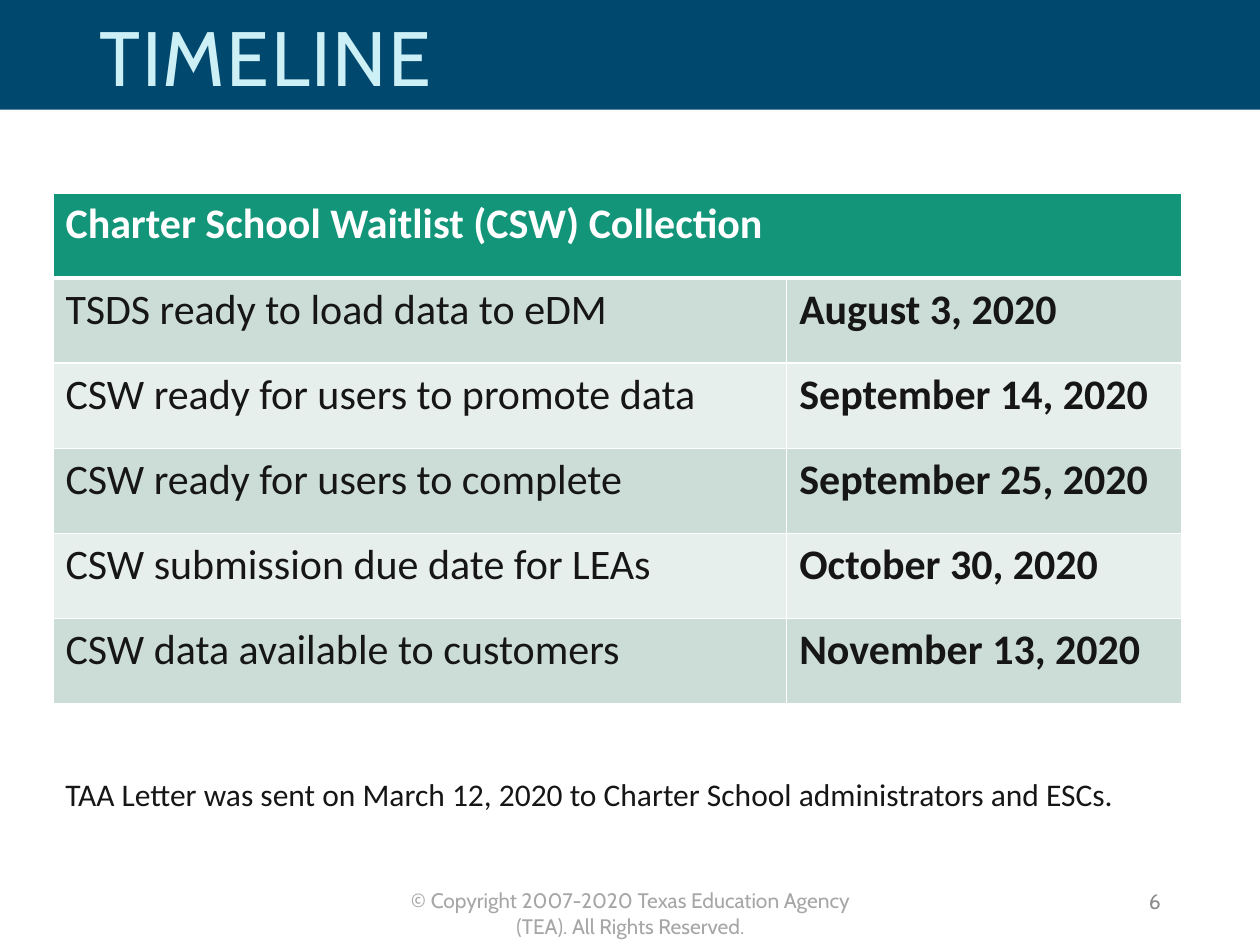
from lxml import etree
from pptx import Presentation
from pptx import util as u
from pptx.dml.color import RGBColor
from pptx.enum import shapes, text
from pptx.oxml.ns import qn

WIDTH, HEIGHT = 10, 7.5
NAVY, ICE, GREEN, INK, WHITE = "00486E", "CCF0F5", "129579", "171616", "FFFFFF"
BANDS = ("CCDDD7", "E7EFEC")
LEFT, CONTENT_WIDTH = 0.042, 0.896


def color(value):
    return RGBColor.from_string(value)


class SlideBuilder:
    """Holds the style and the current slide; lengths are shares of its size."""

    heading_font, body_font = "Cabin", "Calibri"

    def __init__(self, presentation):
        self.slide = presentation.slides.add_slide(presentation.slide_layouts[6])

    def box(self, left, top, width, height):
        return (u.Inches(left * WIDTH), u.Inches(top * HEIGHT),
                u.Inches(width * WIDTH), u.Inches(height * HEIGHT))

    def run(self, paragraph, words, size, ink, font, bold=False):
        run = paragraph.add_run()
        run.text = words
        run.font.size, run.font.name, run.font.bold = u.Pt(size), font, bold
        run.font.color.rgb = color(ink)
        return run

    def band(self, place, fill):
        shape = self.slide.shapes.add_shape(
            shapes.MSO_SHAPE.RECTANGLE, *self.box(*place))
        shape.shadow.inherit = False
        shape.fill.solid()
        shape.fill.fore_color.rgb = color(fill)
        shape.line.fill.background()

    def label(self, place, words, size, ink, font, align=text.PP_ALIGN.LEFT,
              anchor=text.MSO_ANCHOR.MIDDLE, line_spacing=1.0):
        frame = self.slide.shapes.add_textbox(*self.box(*place)).text_frame
        frame.word_wrap = True
        frame.vertical_anchor = anchor
        paragraph = frame.paragraphs[0]
        paragraph.alignment = align
        paragraph.line_spacing = line_spacing
        return self.run(paragraph, words, size, ink, font)

    def cell(self, cell, words, fill, ink, bold, bottom=1):
        self.run(cell.text_frame.paragraphs[0], words, 24, ink, self.body_font, bold)
        self.cell_style(cell, fill, bottom)

    def cell_style(self, cell, fill, bottom=1):
        cell.fill.solid()
        cell.fill.fore_color.rgb = color(fill)
        # Borders come before the fill in the cell properties
        properties = cell._tc.get_or_add_tcPr()
        for index, (side, points) in enumerate(
                (("lnL", 1), ("lnR", 1), ("lnT", 1), ("lnB", bottom))):
            line = etree.Element(qn(f"a:{side}"), w=str(u.Pt(points)))
            solid = etree.SubElement(line, qn("a:solidFill"))
            etree.SubElement(solid, qn("a:srgbClr"), val=WHITE)
            properties.insert(index, line)

    def table(self, place, heading, rows, column_shares):
        left, top, width, height = self.box(*place)
        table = self.slide.shapes.add_table(
            len(rows) + 1, len(column_shares), left, top, width, height).table
        for column, share in zip(table.columns, column_shares):
            column.width = int(width * share)
        # Heading across all columns
        table.cell(0, 0).merge(table.cell(0, len(column_shares) - 1))
        self.cell(table.cell(0, 0), heading, GREEN, WHITE, True, bottom=3)
        self.cell_style(table.cell(0, 1), GREEN, bottom=3)
        # Banded rows with bold dates
        for number, row in enumerate(rows):
            for column, words in enumerate(row):
                self.cell(table.cell(number + 1, column), words,
                          BANDS[number % 2], INK, column == 1)


def main():
    presentation = Presentation()
    presentation.slide_width, presentation.slide_height = u.Inches(WIDTH), u.Inches(HEIGHT)
    builder = SlideBuilder(presentation)

    # Title band
    builder.band((0, 0, 1, 0.116), NAVY)
    title = builder.label((0.069, 0.007, 0.8, 0.116), "TIMELINE", 44, ICE,
                          builder.heading_font, line_spacing=0.9)
    title.font._element.set("spc", "100")

    # Schedule
    builder.table((LEFT, 0.204, CONTENT_WIDTH, 0.541),
                  "Charter School Waitlist (CSW) Collection", [
        ("TSDS ready to load data to eDM", "August 3, 2020"),
        ("CSW ready for users to promote data", "September 14, 2020"),
        ("CSW ready for users to complete", "September 25, 2020"),
        ("CSW submission due date for LEAs", "October 30, 2020"),
        ("CSW data available to customers", "November 13, 2020"),
    ], (0.65, 0.35))

    # Note below the table
    builder.label((LEFT, 0.813, CONTENT_WIDTH, 0.06),
                  "TAA Letter was sent on March 12, 2020 to Charter School "
                  "administrators and ESCs.", 18, INK, builder.body_font,
                  line_spacing=0.9)

    # Footer
    builder.label((0.304, 0.933, 0.393, 0.04),
                  "© Copyright 2007-2020 Texas Education Agency (TEA). "
                  "All Rights Reserved.", 12, "A6A6A6", builder.heading_font,
                  text.PP_ALIGN.CENTER, text.MSO_ANCHOR.TOP)
    builder.label((0.706, 0.927, 0.225, 0.053), "6", 12, "8C8C8C",
                  builder.heading_font, text.PP_ALIGN.RIGHT)

    presentation.save("out.pptx")


if __name__ == "__main__":
    main()
